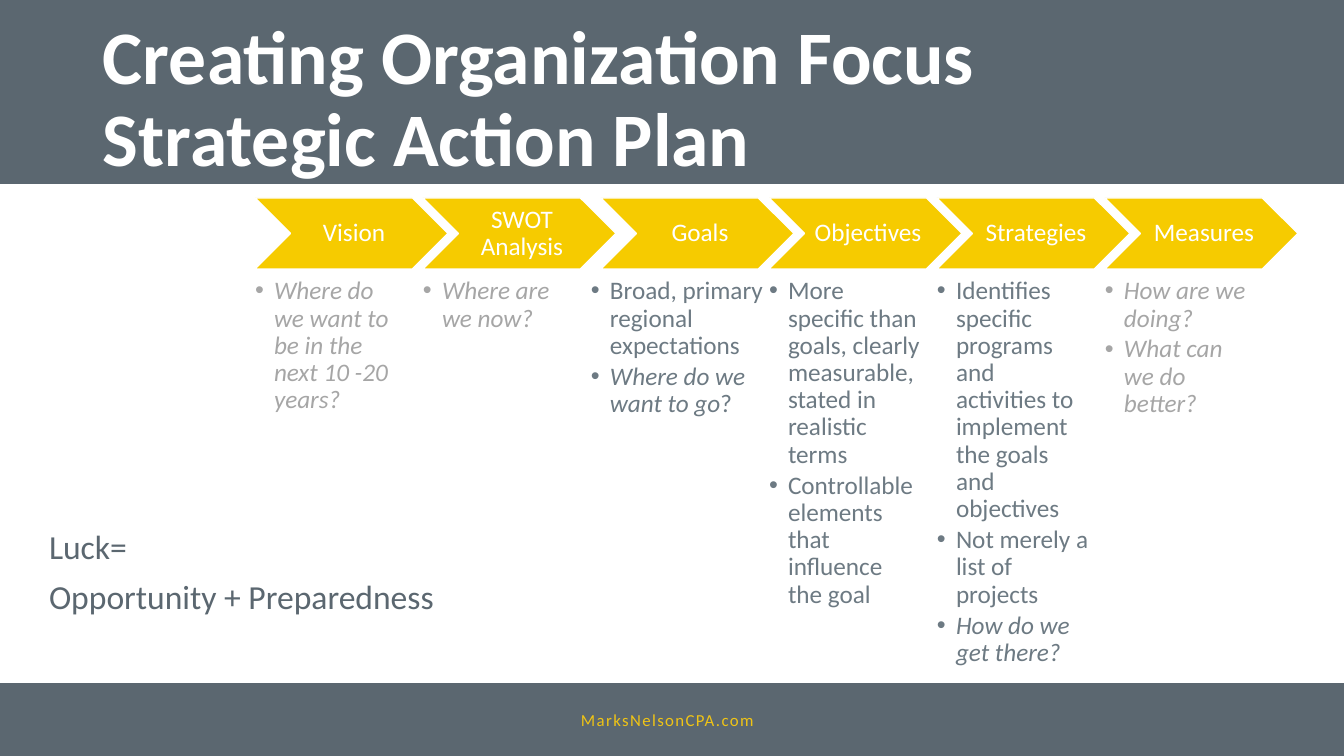
from pptx import Presentation
from pptx.dml.color import RGBColor
from pptx.enum.shapes import MSO_SHAPE
from pptx.enum.text import MSO_ANCHOR, PP_ALIGN
from pptx.util import Pt
from lxml.etree import SubElement
from pptx.oxml.ns import qn

PX = 914400 / 100.8
SLATE = RGBColor(0x5B, 0x67, 0x70)
GREY = RGBColor(0x6D, 0x7A, 0x83)
PALE = RGBColor(0xA6, 0xA6, 0xA6)
YELLOW = RGBColor(0xF6, 0xCB, 0x00)
GOLD = RGBColor(0xF0, 0xC4, 0x15)
WHITE = RGBColor(0xFF, 0xFF, 0xFF)


def px(*lengths):
    """Turn pixel lengths into EMU."""
    return [round(n * PX) for n in lengths]


def write(s, paragraphs, size, color, insets=(10, 5, 10, 5), anchor=MSO_ANCHOR.TOP,
          bullet=False, bold=False, **fmt):
    """Fill a shape with paragraphs, each a list of (text, italic) runs."""
    tf = s.text_frame
    tf.word_wrap = True
    tf.vertical_anchor = anchor
    tf.margin_left, tf.margin_top, tf.margin_right, tf.margin_bottom = px(*insets)
    for i, runs in enumerate(paragraphs):
        p = tf.add_paragraph() if i else tf.paragraphs[0]
        for name, value in ({"line_spacing": 0.9} | fmt).items():
            if i or name != "space_before":
                setattr(p, name, value)
        if bullet:
            pPr = p._p.get_or_add_pPr()
            indent = px(19)[0]
            pPr.set("marL", str(indent))
            pPr.set("indent", str(-indent))
            SubElement(pPr, qn("a:buFont"), typeface="Arial")
            SubElement(pPr, qn("a:buChar"), char="•")
        for j, (text, italic) in enumerate(runs):
            if text == "\n":
                p.add_line_break()
                continue
            r = p.add_run()
            r.text = text
            r.font.color.rgb = color
            for name, value in {"name": "Calibri", "size": Pt(size),
                                "bold": bold, "italic": italic}.items():
                setattr(r.font, name, value)


prs = Presentation()
prs.slide_width, prs.slide_height = px(1344, 756)
slide = prs.slides.add_slide(prs.slide_layouts[6])
shapes = slide.shapes

# Header and footer bands
for top, height in [(683, 73), (0, 184)]:
    s = shapes.add_shape(MSO_SHAPE.RECTANGLE, *px(0, top, 1344, height))
    s.shadow.inherit = False
    s.fill.solid()
    s.fill.fore_color.rgb = SLATE
    s.line.fill.background()

footer = shapes.add_textbox(*px(571, 705, 203, 30))
write(footer, [[("MarksNelsonCPA.com", False)]], 12, GOLD, line_spacing=1)
footer.text_frame.paragraphs[0].runs[0].font._element.set("spc", "100")

title = shapes.add_textbox(*px(93, 28, 1159, 146))
write(title, [[("Creating Organization Focus", False), ("\n", False),
               ("Strategic Action Plan", False)]],
      54, WHITE, anchor=MSO_ANCHOR.MIDDLE, bold=True)

# Planning steps: heading, text colour, bullets
steps = [
    ("Vision", PALE, [[("Where do we want to be in the next 10 -20 years?", True)]]),
    ("SWOT Analysis", PALE, [[("Where are we now?", True)]]),
    ("Goals", GREY, [[("Broad, primary regional expectations", False)],
                     [("Where do we want to go", True), ("?", False)]]),
    ("Objectives", GREY, [
        [("More specific than goals, clearly measurable, stated in realistic terms", False)],
        [("Controllable elements that influence the goal", False)]]),
    ("Strategies", GREY, [
        [("Identifies specific programs and activities to implement the goals and objectives",
          False)],
        [("Not merely a list of projects", False)],
        [("How do we get there?", True)]]),
    ("Measures", PALE, [[("How are we doing?", True)], [("What can we do better?", True)]]),
]
STEP_LEFT, STEP_PITCH, WIDE_EXTRA = 255, 168, 10

for i, (heading, color, bullets) in enumerate(steps):
    wide = heading == "Goals"
    left = STEP_LEFT + STEP_PITCH * i + (WIDE_EXTRA if i >= 2 else 0)
    s = shapes.add_shape(MSO_SHAPE.CHEVRON, *px(left, 198, 193, 71))
    s.shadow.inherit = False
    s.fill.solid()
    s.fill.fore_color.rgb = YELLOW
    s.line.color.rgb = WHITE
    s.line.width = Pt(1)
    write(s, [[(heading, False)]], 18, WHITE, (8, 3, 3, 3), MSO_ANCHOR.MIDDLE,
          alignment=PP_ALIGN.CENTER)

    detail_left = left - WIDE_EXTRA if wide else left
    detail = shapes.add_textbox(*px(detail_left, 278, 172 if wide else 153, 403))
    write(detail, bullets, 18, color, (0, 0, 0, 0), bullet=True, space_after=Pt(2.7))

luck = shapes.add_textbox(*px(39, 525, 460, 124))
write(luck, [[("Luck=", False)], [("Opportunity + Preparedness", False)]],
      24, SLATE, space_before=Pt(10))

prs.save("out.pptx")
